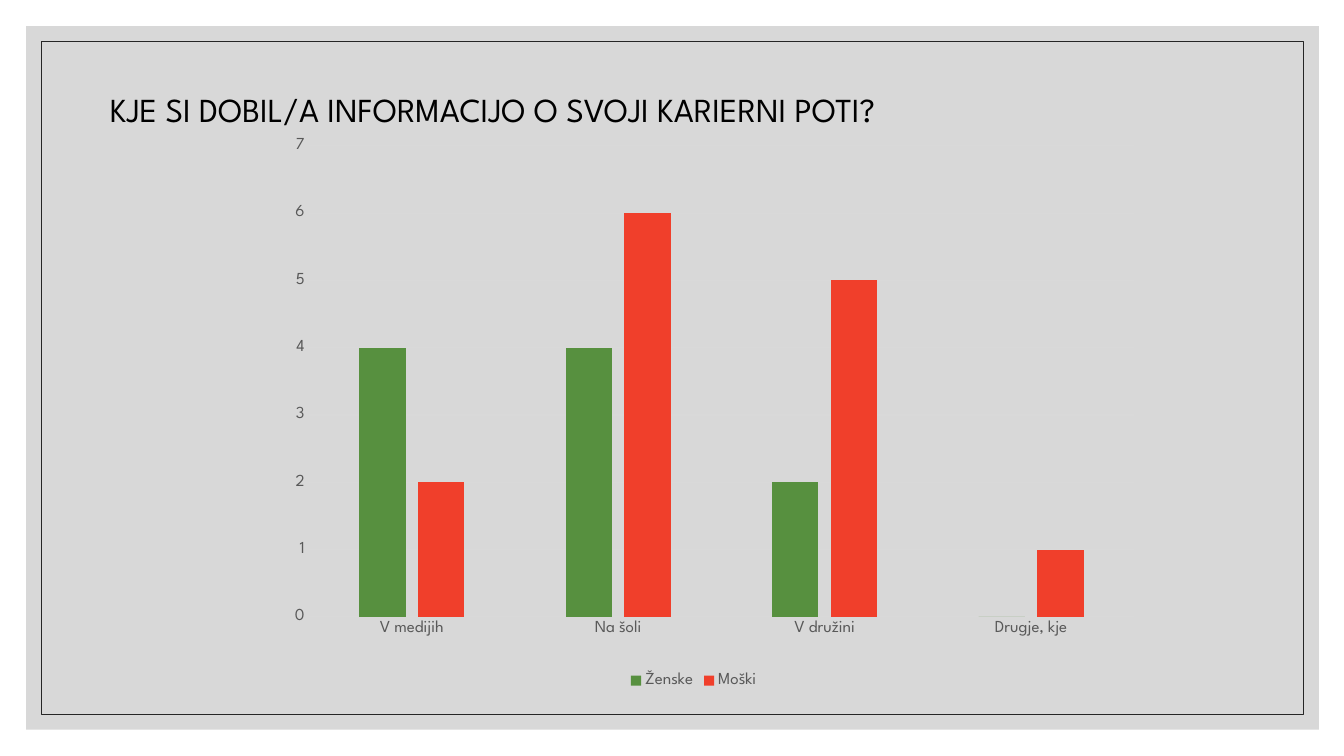
from dataclasses import dataclass

from lxml import etree
from pptx import Presentation
from pptx.chart.data import CategoryChartData
from pptx.dml.color import RGBColor
from pptx.enum.chart import XL_CHART_TYPE, XL_LEGEND_POSITION, XL_TICK_MARK
from pptx.enum.shapes import MSO_SHAPE
from pptx.enum.text import MSO_ANCHOR, MSO_AUTO_SIZE, PP_ALIGN
from pptx.oxml.ns import qn
from pptx.util import Inches, Pt

COLUMNS = XL_CHART_TYPE.COLUMN_CLUSTERED
BOTTOM = XL_LEGEND_POSITION.BOTTOM
NO_TICK = XL_TICK_MARK.NONE
RECTANGLE = MSO_SHAPE.RECTANGLE
MIDDLE = MSO_ANCHOR.MIDDLE
NO_FIT = MSO_AUTO_SIZE.NONE
LEFT = PP_ALIGN.LEFT
TITLE_ONLY = 5


@dataclass(frozen=True)
class Theme:
    font: str = "League Spartan"
    title_size: int = 24
    chart_size: int = 12
    ink: str = "000000"
    label: str = "595959"
    rule: str = "D9D9D9"
    panel: str = "BFBFBF"
    panel_opacity: int = 60
    frame: str = "262626"
    women: str = "57903F"
    men: str = "F03F2B"


THEME = Theme()
TITLE = "KJE SI DOBIL/A INFORMACIJO O SVOJI KARIERNI POTI?"
SOURCES = ["V medijih", "Na šoli", "V družini", "Drugje, kje"]
ANSWERS = [
    ("Ženske", [4, 4, 2, 0], THEME.women),
    ("Moški", [2, 6, 5, 1], THEME.men),
]
PLOT_AREA = {"x": 0.064, "y": 0.021, "w": 0.935, "h": 0.844}


def color(value):
    return RGBColor.from_string(value)


def style_font(font, size, value):
    font.name = THEME.font
    font.size = Pt(size)
    font.color.rgb = color(value)


def style_line(line, value, width):
    line.color.rgb = color(value)
    line.width = Pt(width)


def add_backdrop(page, box):
    left, top, width, height = box
    inset = Inches(0.15)
    panel = page.shapes.add_shape(RECTANGLE, left, top, width, height)
    panel.shadow.inherit = False
    panel.fill.solid()
    panel.fill.fore_color.rgb = color(THEME.panel)
    panel.line.fill.background()
    tint = panel.element.spPr.find(".//" + qn("a:srgbClr"))
    opacity = etree.SubElement(tint, qn("a:alpha"))
    opacity.set("val", str(THEME.panel_opacity * 1000))

    frame = page.shapes.add_shape(
        RECTANGLE, left + inset, top + inset, width - 2 * inset, height - 2 * inset
    )
    frame.shadow.inherit = False
    frame.fill.background()
    style_line(frame.line, THEME.frame, 0.5)


def add_title(page, box):
    title = page.shapes.title
    title.left, title.top, title.width, title.height = box
    title.element.getparent().append(title.element)
    frame = title.text_frame
    frame.word_wrap = True
    frame.auto_size = NO_FIT
    frame.vertical_anchor = MIDDLE
    para = frame.paragraphs[0]
    para.alignment = LEFT
    span = para.add_run()
    span.text = TITLE
    style_font(span.font, THEME.title_size, THEME.ink)


def place_plot_area(chart):
    plot_area = chart.element.find(".//" + qn("c:plotArea"))
    layout = plot_area.find(qn("c:layout"))
    if layout is None:
        layout = etree.Element(qn("c:layout"))
        plot_area.insert(0, layout)
    manual = etree.SubElement(layout, qn("c:manualLayout"))
    settings = {"layoutTarget": "inner", "xMode": "edge", "yMode": "edge", **PLOT_AREA}
    for name, value in settings.items():
        etree.SubElement(manual, qn("c:" + name)).set("val", str(value))


def add_answer_chart(page, box):
    data = CategoryChartData()
    data.categories = SOURCES
    for name, values, _ in ANSWERS:
        data.add_series(name, values)
    chart = page.shapes.add_chart(COLUMNS, *box, data).chart
    chart.has_title = False
    style_font(chart.font, THEME.chart_size, THEME.label)

    plot = chart.plots[0]
    plot.vary_by_categories = False
    plot.gap_width = 219
    plot.overlap = -27
    for series, (_, _, value) in zip(plot.series, ANSWERS):
        series.format.fill.solid()
        series.format.fill.fore_color.rgb = color(value)

    for axis in (chart.category_axis, chart.value_axis):
        axis.major_tick_mark = NO_TICK
        axis.minor_tick_mark = NO_TICK
        style_font(axis.tick_labels.font, THEME.chart_size, THEME.label)
    style_line(chart.category_axis.format.line, THEME.rule, 0.75)
    scale = chart.value_axis
    scale.minimum_scale, scale.maximum_scale, scale.major_unit = 0, 7, 1
    scale.format.line.fill.background()
    scale.has_major_gridlines = True
    style_line(scale.major_gridlines.format.line, THEME.rule, 0.75)

    chart.has_legend = True
    chart.legend.position = BOTTOM
    chart.legend.include_in_layout = False
    style_font(chart.legend.font, THEME.chart_size, THEME.label)
    place_plot_area(chart)


def inches(*lengths):
    return [Inches(length) for length in lengths]


def main():
    deck = Presentation()
    deck.slide_width, deck.slide_height = inches(13.33, 7.5)
    page = deck.slides.add_slide(deck.slide_layouts[TITLE_ONLY])
    add_backdrop(page, inches(0.26, 0.26, 12.82, 6.98))
    add_title(page, inches(0.99, 0.83, 10.38, 0.5))
    add_answer_chart(page, inches(2.5, 1.33, 8.76, 5.54))
    deck.save("out.pptx")


if __name__ == "__main__":
    main()
